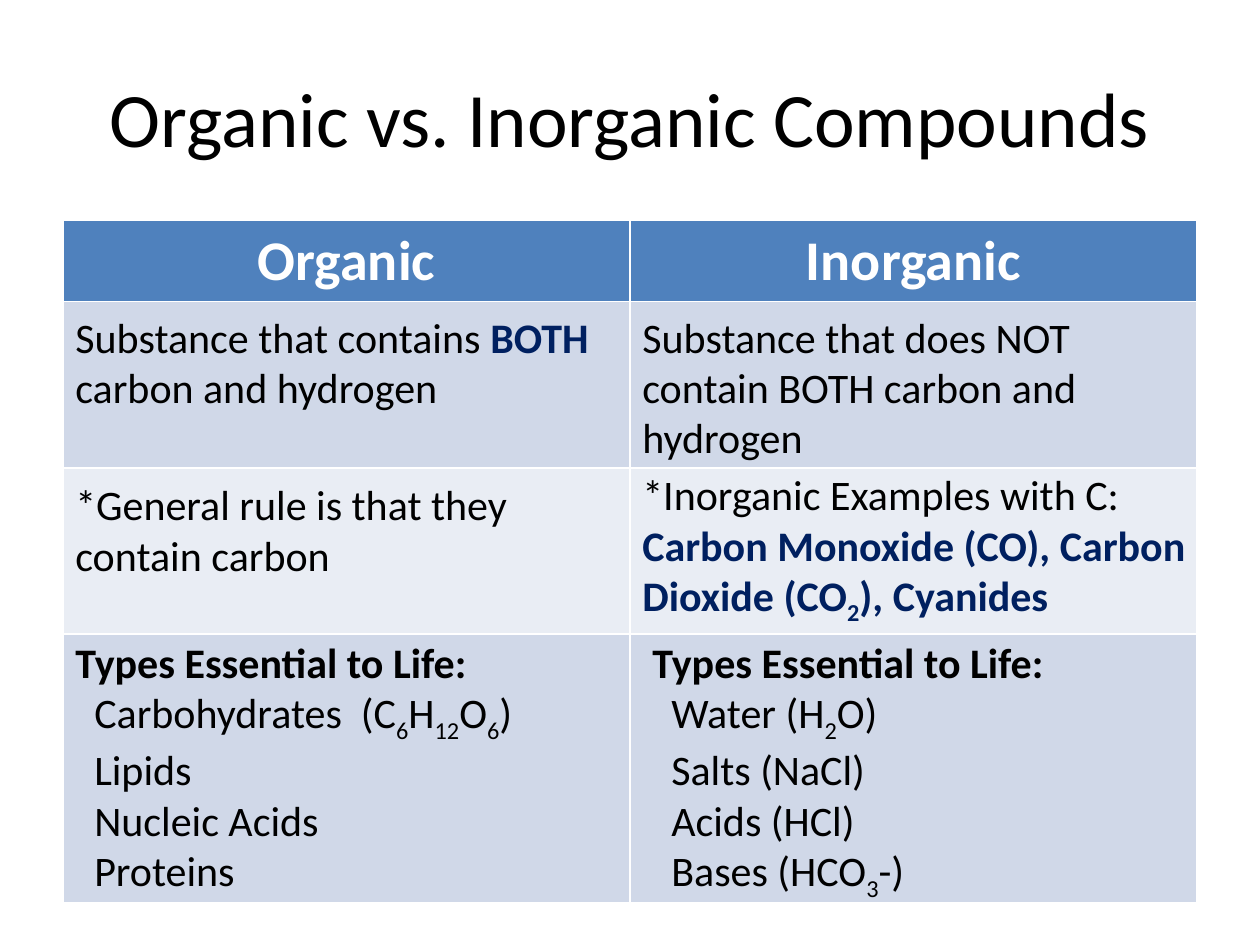
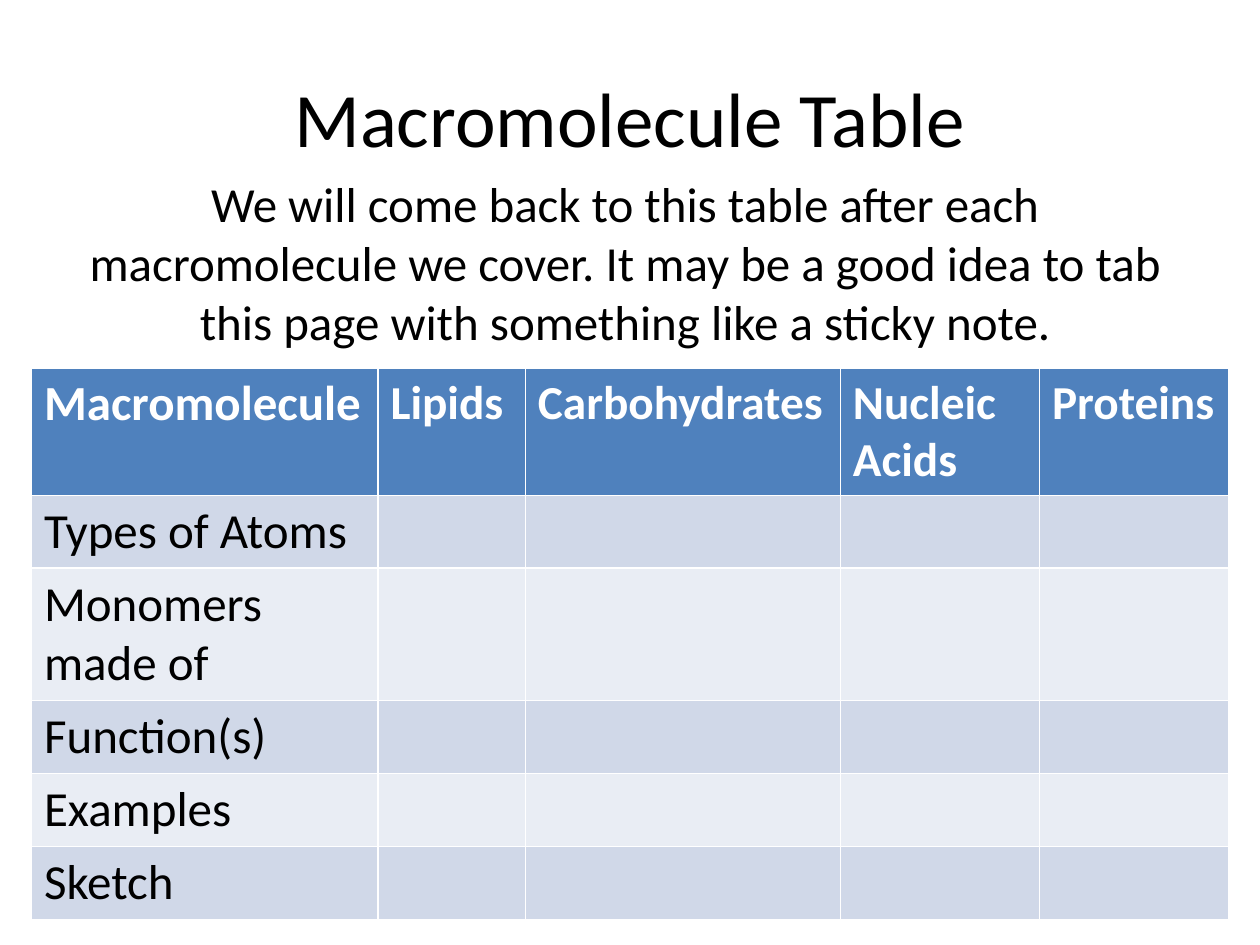
from pptx import Presentation
from pptx.dml.color import RGBColor
from pptx.enum.text import MSO_ANCHOR, PP_ALIGN as Align
from pptx.util import Inches, Pt

FONT = "Calibri"
COLORS = {"text": "000000", "key": "002060", "header": "4F81BD",
          "header_text": "FFFFFF", "band_dark": "D0D8E8", "band_light": "E9EDF4"}

# Content: a span is (text, styles), with styles among bold, key and sub
COMPARISON = {
    "title": "Organic vs. Inorganic Compounds",
    "at": (0.5, 1.75), "widths": [4.5, 4.5], "heights": [0.64, 1.32, 1.32, 2.13],
    "rows": [["Organic", "Inorganic"]],
}
# Each note: (left, top, width, height), paragraphs of spans
NOTES = [
    ((0.5, 2.42, 4.5, 0.91),
     [[("Substance that contains ", ""), ("BOTH ", "key"), ("carbon and hydrogen", "")]]),
    ((5, 2.42, 4.5, 1.31),
     [[("Substance that does NOT contain BOTH carbon and hydrogen", "")]]),
    ((5, 3.67, 5, 1.31),
     [[("*Inorganic Examples with C: ", ""),
       ("Carbon Monoxide (CO), Carbon Dioxide (CO", "key"), ("2", "key sub"),
       ("), Cyanides", "key")]]),
    ((0.5, 3.75, 4.5, 0.91), [[("*General rule is that they contain carbon", "")]]),
    ((0.5, 5, 4.5, 2.12),
     [[("Types Essential to Life:", "bold")],
      [("Carbohydrates  (C", ""), ("6", "sub"), ("H", ""), ("12", "sub"),
       ("O", ""), ("6", "sub"), (")", "")],
      [("Lipids", "")], [("Nucleic Acids", "")], [("Proteins", "")]]),
    ((5.08, 5, 4.5, 2.12),
     [[("Types Essential to Life:", "bold")],
      [("Water (H", ""), ("2", "sub"), ("O)", "")],
      [("Salts (NaCl)", "")], [("Acids (HCl)", "")],
      [("Bases (HCO", ""), ("3", "sub"), ("-)", "")]]),
]
MACROMOLECULES = {
    "title": "Macromolecule Table",
    "at": (0.25, 2.92), "widths": [2.75, 1.17, 2.5, 1.58, 1.5],
    "heights": [1.01, 0.57, 1.05, 0.58, 0.58, 0.57],
    "rows": [["Macromolecule", "Lipids", "Carbohydrates", "Nucleic Acids", "Proteins"],
             ["Types of Atoms"], ["Monomers made of"], ["Function(s)"],
             ["Examples"], ["Sketch"]],
}
REMINDER = ("We will come back to this table after each macromolecule we cover. "
            "It may be a good idea to tab this page with something like a sticky note.")


def rgb(name):
    return RGBColor.from_string(COLORS[name])


def style(span, size, color="text", bold=False):
    span.font.name = FONT
    span.font.size = Pt(size)
    span.font.color.rgb = rgb(color)
    span.font.bold = bold


def add_page(deck, title):
    page = deck.slides.add_slide(deck.slide_layouts[5])
    box = page.shapes.title
    box.left, box.top, box.width, box.height = map(Inches, (0.5, 0.3, 9, 1.25))
    box.text_frame.text = title
    box.text_frame.vertical_anchor = MSO_ANCHOR.MIDDLE
    para = box.text_frame.paragraphs[0]
    para.alignment = Align.CENTER
    style(para.runs[0], 44)
    return page


def add_banded_table(page, data, header_sizes, align):
    """Header row in blue, then alternating bands; missing cells stay empty."""
    widths, heights = data["widths"], data["heights"]
    frame = page.shapes.add_table(len(heights), len(widths), *map(Inches, data["at"]),
                                  Inches(sum(widths)), Inches(sum(heights)))
    table = frame.table
    for column, width in zip(table.columns, widths):
        column.width = Inches(width)
    for row, height in zip(table.rows, heights):
        row.height = Inches(height)
    for r in range(len(heights)):
        band = "header" if r == 0 else "band_dark" if r % 2 else "band_light"
        for c in range(len(widths)):
            cell = table.cell(r, c)
            cell.fill.solid()
            cell.fill.fore_color.rgb = rgb(band)
            if r >= len(data["rows"]) or c >= len(data["rows"][r]):
                continue
            cell.text_frame.text = data["rows"][r][c]
            para = cell.text_frame.paragraphs[0]
            para.alignment = align
            if r == 0:
                style(para.runs[0], header_sizes[c], "header_text", True)
            else:
                style(para.runs[0], 28)


def add_text(page, place, paragraphs, size, align=Align.LEFT):
    """Paragraphs after the first are list items, set in a little."""
    box = page.shapes.add_textbox(*map(Inches, place))
    frame = box.text_frame
    frame.word_wrap = True
    for i, spans in enumerate(paragraphs):
        para = frame.add_paragraph() if i else frame.paragraphs[0]
        para.alignment = align
        if i:
            para._p.get_or_add_pPr().set("marL", str(Inches(0.15)))
        for text, styles in spans:
            span = para.add_run()
            span.text = text
            key = "key" in styles
            style(span, size, "key" if key else "text", key or "bold" in styles)
            if "sub" in styles:
                span.font._element.set("baseline", "-25000")


def main():
    deck = Presentation()
    deck.slide_width, deck.slide_height = Inches(10), Inches(7.5)

    # Organic and inorganic compared
    page = add_page(deck, COMPARISON["title"])
    add_banded_table(page, COMPARISON, [32, 32], Align.CENTER)
    for place, paragraphs in NOTES:
        add_text(page, place, paragraphs, 24)

    # Macromolecule table to fill in
    page = add_page(deck, MACROMOLECULES["title"])
    add_banded_table(page, MACROMOLECULES, [28, 27, 27, 27, 27], Align.LEFT)
    add_text(page, (0.42, 1.33, 9.08, 1.51), [[(REMINDER, "")]], 28, Align.CENTER)

    deck.save("out.pptx")


if __name__ == "__main__":
    main()
